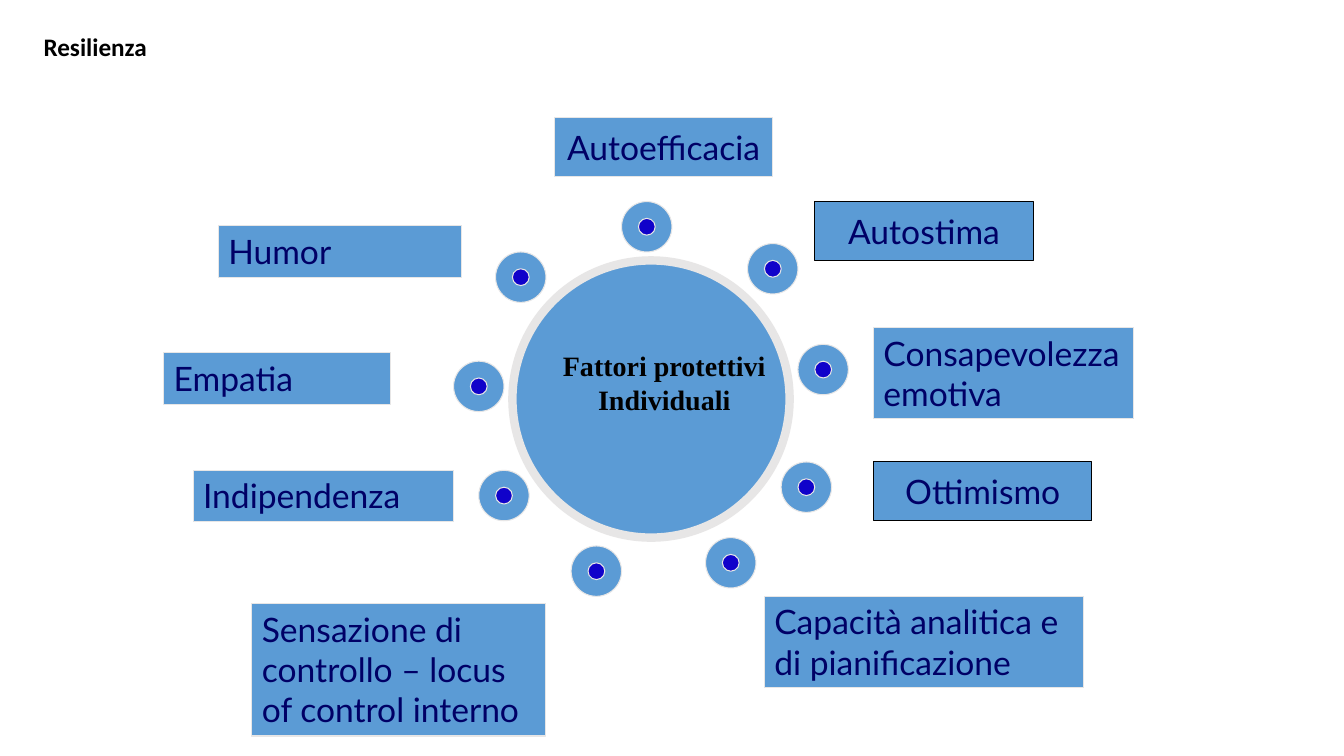
from pptx import Presentation
from pptx.dml.color import RGBColor
from pptx.enum.shapes import MSO_SHAPE
from pptx.enum.text import MSO_ANCHOR, MSO_AUTO_SIZE, PP_ALIGN
from pptx.util import Emu, Pt

OVAL, RECTANGLE = MSO_SHAPE.OVAL, MSO_SHAPE.RECTANGLE
LEFT, CENTER = PP_ALIGN.LEFT, PP_ALIGN.CENTER
TOP, MIDDLE = MSO_ANCHOR.TOP, MSO_ANCHOR.MIDDLE
GROW, FIXED = MSO_AUTO_SIZE.SHAPE_TO_FIT_TEXT, MSO_AUTO_SIZE.NONE
EMU_PER_PX = 9525

COLORS = {"blue": "5B9BD5", "dot": "1002CA", "rim": "E7E6E6", "navy": "000066", "black": "000000"}
FONTS = {
    "title": {"name": "Calibri", "size": Pt(18), "bold": True, "color": "black"},
    "hub": {"name": "Times New Roman", "size": Pt(20), "bold": True, "color": "black"},
    "factor": {"name": "Lato", "size": Pt(24), "bold": False, "color": "navy"},
}
FRAMES = {
    "centered": {"vertical_anchor": MIDDLE, "word_wrap": False, "auto_size": FIXED},
    "hub": {"vertical_anchor": MIDDLE, "word_wrap": False, "auto_size": FIXED,
            "margin_bottom": Emu(37 * EMU_PER_PX)},
    "growing": {"vertical_anchor": TOP, "word_wrap": True, "auto_size": GROW},
}

HUB = (488, 248, 264, 264)
HUB_LINES = [("Fattori protettivi", LEFT), ("Individuali", CENTER)]
RING_SIZE, DOT_SIZE = 48, 16
RINGS = [(592, 192), (712, 232), (744, 440), (760, 328), (544, 520),
         (672, 512), (472, 240), (432, 344), (456, 448)]
CENTERED_FACTORS = [
    ("Autoefficacia", (528, 112, 208, 56), "rim"),
    ("Autostima", (776, 192, 208, 56), "black"),
    ("Ottimismo", (832, 440, 208, 56), "black"),
]
GROWING_FACTORS = [
    ("Empatia", (156, 336, 216, 49)),
    ("Humor", (208, 215, 232, 49)),
    ("Indipendenza", (184, 448, 248, 49)),
    ("Consapevolezza emotiva", (832, 312, 248, 87)),
    ("Sensazione di controllo – locus of control interno", (240, 575, 280, 126)),
    ("Capacità analitica e di pianificazione", (728, 568, 304, 87)),
]


class FactorSlide:
    """Draws the elements of one slide in a shared style."""

    def __init__(self, presentation):
        self.slide = presentation.slides.add_slide(presentation.slide_layouts[6])

    def box(self, values):
        return [Emu(value * EMU_PER_PX) for value in values]

    def shape(self, kind, box, fill="blue", line="rim", weight=0.75, parent=None):
        shapes = (parent or self.slide).shapes
        shape = shapes.add_shape(kind, *self.box(box))
        shape.shadow.inherit = False
        shape.fill.solid()
        shape.fill.fore_color.rgb = RGBColor.from_string(COLORS[fill])
        shape.line.color.rgb = RGBColor.from_string(COLORS[line])
        shape.line.width = Pt(weight)
        return shape

    def set_text(self, shape, lines, font, frame):
        text_frame = shape.text_frame
        for name, value in FRAMES[frame].items():
            setattr(text_frame, name, value)
        for index, (text, alignment) in enumerate(lines):
            paragraph = text_frame.add_paragraph() if index else text_frame.paragraphs[0]
            paragraph.alignment = alignment
            run = paragraph.add_run()
            run.text = text
            for name, value in FONTS[font].items():
                if name == "color":
                    run.font.color.rgb = RGBColor.from_string(COLORS[value])
                else:
                    setattr(run.font, name, value)

    def title(self, text, box):
        self.set_text(self.slide.shapes.add_textbox(*self.box(box)), [(text, LEFT)], "title", "growing")

    def hub(self, lines, box):
        self.set_text(self.shape(OVAL, box, weight=6), lines, "hub", "hub")

    def ring(self, left, top):
        group = self.slide.shapes.add_group_shape()
        inset = (RING_SIZE - DOT_SIZE) // 2
        self.shape(OVAL, (left, top, RING_SIZE, RING_SIZE), parent=group)
        self.shape(OVAL, (left + inset, top + inset, DOT_SIZE, DOT_SIZE), fill="dot", parent=group)

    def factor(self, text, box, line="rim", alignment=LEFT, frame="growing"):
        self.set_text(self.shape(RECTANGLE, box, line=line), [(text, alignment)], "factor", frame)


def main():
    presentation = Presentation()
    presentation.slide_width = Emu(1280 * EMU_PER_PX)
    presentation.slide_height = Emu(720 * EMU_PER_PX)
    slide = FactorSlide(presentation)
    slide.hub(HUB_LINES, HUB)
    for left, top in RINGS:
        slide.ring(left, top)
    for text, box, line in CENTERED_FACTORS:
        slide.factor(text, box, line, CENTER, "centered")
    for text, box in GROWING_FACTORS:
        slide.factor(text, box)
    slide.title("Resilienza", (32, 25, 640, 38))
    presentation.save("out.pptx")


if __name__ == "__main__":
    main()
